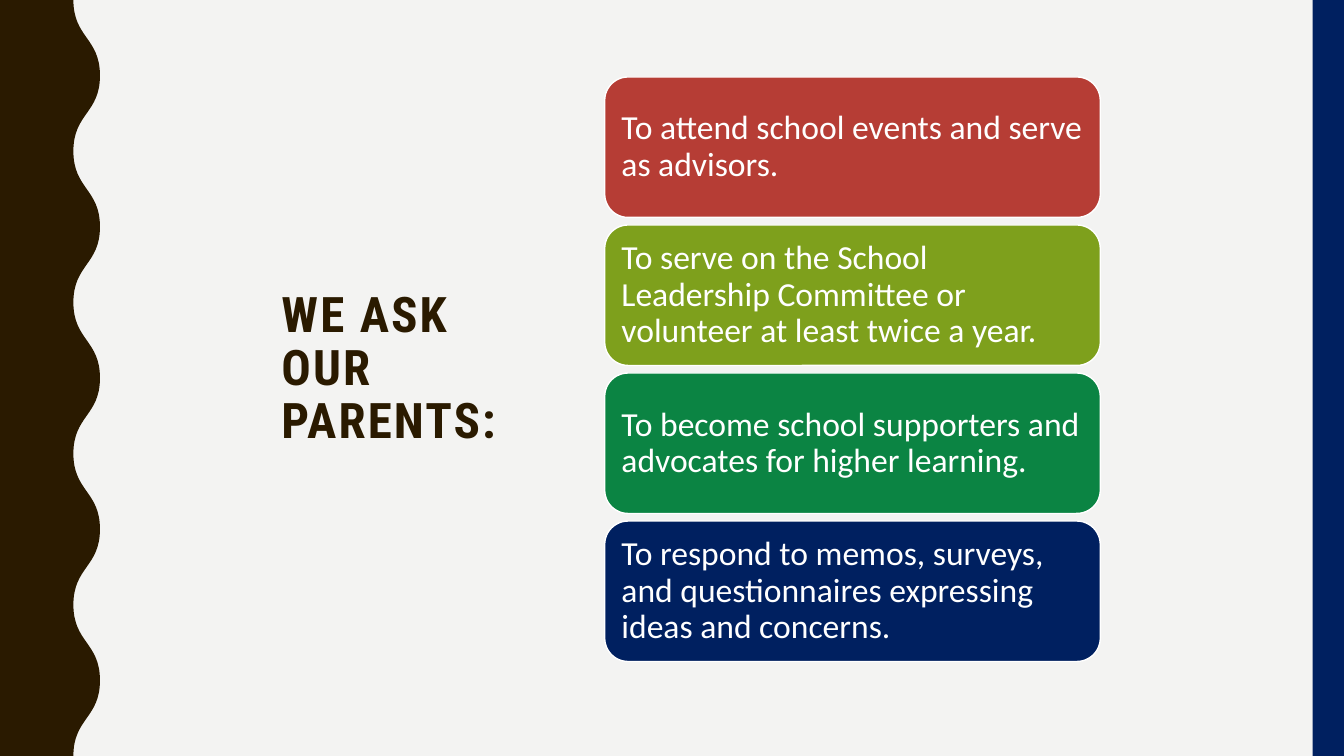
"""Build the slide listing what the school asks of parents."""
from lxml import etree
from pptx import Presentation
from pptx import util as u
from pptx.dml.color import RGBColor
from pptx.enum import shapes, text
from pptx.oxml import ns

TITLE = "WE ASK OUR PARENTS:"
REQUESTS = [
    ("To attend school events and serve as advisors.", "red"),
    ("To serve on the School Leadership Committee or volunteer at least twice a year.", "olive"),
    ("To become school supporters and advocates for higher learning.", "green"),
    ("To respond to memos, surveys, and questionnaires expressing ideas and concerns.", "navy"),
]
COLOURS = {
    "background": "F3F3F2", "brown": "2A1A00", "navy": "002060", "red": "B63D35",
    "olive": "7EA01C", "green": "0B8443", "white": "FFFFFF",
}
WIDTH, HEIGHT = u.Cm(33.87), u.Cm(19.05)
BAR_WIDTH = u.Cm(0.79)
WAVE_INNER, WAVE_OUTER = u.Cm(1.85), u.Cm(2.52)
HALF_WAVES = 10
CARD_LEFT, CARD_TOP = u.Cm(15.24), u.Cm(1.94)
CARD_WIDTH, CARD_HEIGHT, CARD_PITCH = u.Cm(12.49), u.Cm(3.54), u.Cm(3.73)


def colour(name):
    return RGBColor.from_string(COLOURS[name])


def paint(shape, fill, line=None):
    shape.shadow.inherit = False
    shape.fill.solid()
    shape.fill.fore_color.rgb = colour(fill)
    if line:
        shape.line.color.rgb = colour(line)
        shape.line.width = u.Pt(1)
    else:
        shape.line.fill.background()


def write(shape, words, font_name, size, font_colour, bold=False):
    frame = shape.text_frame
    frame.text = words
    frame.word_wrap = True
    frame.auto_size = text.MSO_AUTO_SIZE.NONE
    frame.vertical_anchor = text.MSO_ANCHOR.MIDDLE
    paragraph = frame.paragraphs[0]
    paragraph.alignment = text.PP_ALIGN.LEFT
    paragraph.line_spacing = 0.9
    paragraph.space_before = u.Pt(0)
    run = paragraph.runs[0]
    run.font.name = font_name
    run.font.size = u.Pt(size)
    run.font.bold = bold
    run.font.color.rgb = colour(font_colour)
    return run


def bend(segment, start, end):
    middle = (start[1] + end[1]) // 2
    curve = etree.Element(ns.qn("a:cubicBezTo"))
    for x, y in ((start[0], middle), (end[0], middle), end):
        etree.SubElement(curve, ns.qn("a:pt"), x=str(x), y=str(y))
    segment.getparent().replace(segment, curve)


def add_wave(slide):
    crests = [(WAVE_OUTER if index % 2 else WAVE_INNER, HEIGHT * index // HALF_WAVES)
              for index in range(HALF_WAVES + 1)]
    builder = slide.shapes.build_freeform(*crests[0])
    builder.add_line_segments([*crests[1:], (0, HEIGHT), (0, 0)], close=True)
    wave = builder.convert_to_shape()
    paint(wave, "brown")
    segments = list(wave._element.iter(ns.qn("a:lnTo")))
    for segment, start, end in zip(segments, crests, crests[1:]):
        bend(segment, start, end)


def add_card(slide, index, words, fill):
    card = slide.shapes.add_shape(
        shapes.MSO_SHAPE.ROUNDED_RECTANGLE,
        CARD_LEFT, CARD_TOP + index * CARD_PITCH, CARD_WIDTH, CARD_HEIGHT)
    paint(card, fill, "white")
    frame = card.text_frame
    frame.margin_left = frame.margin_right = u.Cm(0.25)
    frame.margin_top = frame.margin_bottom = u.Cm(0.25)
    write(card, words, "Calibri", 24, "white")


def main():
    presentation = Presentation()
    presentation.slide_width, presentation.slide_height = WIDTH, HEIGHT
    slide = presentation.slides.add_slide(presentation.slide_layouts.get_by_name("Title Only"))
    slide.background.fill.solid()
    slide.background.fill.fore_color.rgb = colour("background")

    bar = slide.shapes.add_shape(
        shapes.MSO_SHAPE.RECTANGLE, WIDTH - BAR_WIDTH, 0, BAR_WIDTH, HEIGHT)
    paint(bar, "navy")
    add_wave(slide)

    title = slide.shapes.title
    title.left, title.top = u.Cm(6.84), u.Cm(1.79)
    title.width, title.height = u.Cm(7.06), u.Cm(15.04)
    run = write(title, TITLE, "Roboto Condensed", 35, "brown", bold=True)
    run._r.get_or_add_rPr().set("spc", "150")

    for index, (words, fill) in enumerate(REQUESTS):
        add_card(slide, index, words, fill)
    presentation.save("out.pptx")


if __name__ == "__main__":
    main()
